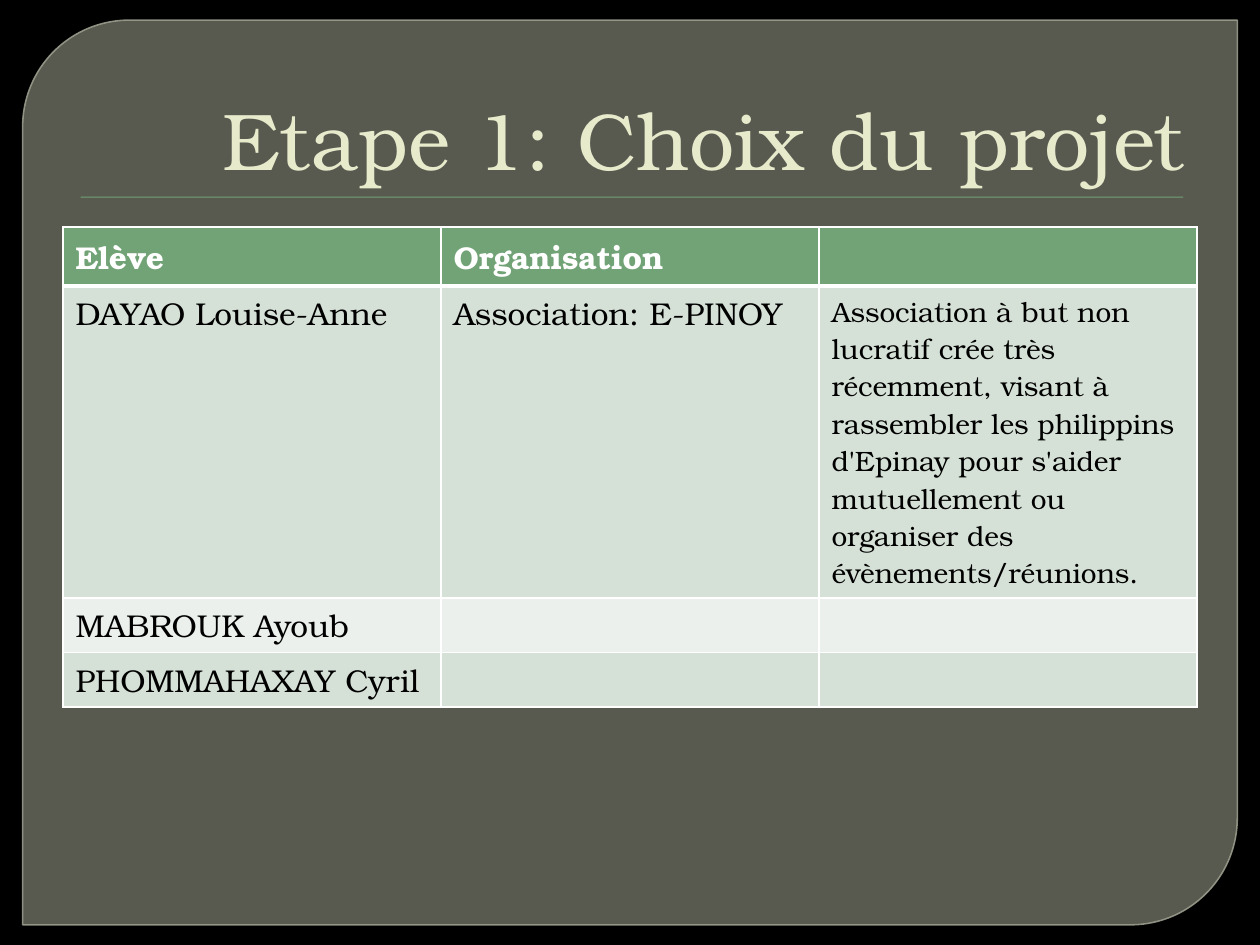
from dataclasses import dataclass

from lxml.etree import SubElement
from pptx import Presentation
from pptx.dml.color import RGBColor
from pptx.enum.shapes import MSO_SHAPE
from pptx.enum.text import MSO_ANCHOR, PP_ALIGN
from pptx.oxml.ns import qn
from pptx.util import Inches, Pt

FONT = "TeX Gyre Bonum"
COLORS = {
    "background": "000000",
    "panel": "888B7B",
    "panel_line": "9DA090",
    "green": "72A376",
    "title": "E7EACB",
    "band_dark": "D5E0D6",
    "band_light": "EBF0EC",
    "white": "FFFFFF",
    "black": "000000",
}


@dataclass
class Row:
    cells: tuple[str, str, str]
    height: float
    fill: str
    color: str = "black"
    bold: bool = False
    top: float = 1
    bottom: float = 1


ROWS = [
    Row(("Elève", "Organisation", ""), 0.47, "green", "white", True, bottom=3),
    Row(("DAYAO Louise-Anne", "Association: E-PINOY",
         "Association à but non lucratif crée très récemment, visant à "
         "rassembler les philippins d'Epinay pour s'aider mutuellement ou "
         "organiser des évènements/réunions."), 2.47, "band_dark", top=3),
    Row(("MABROUK Ayoub", "", ""), 0.43, "band_light"),
    Row(("PHOMMAHAXAY Cyril", "", ""), 0.43, "band_dark"),
]
SIZES = (18, 18, 16)


def rgb(name: str) -> RGBColor:
    return RGBColor.from_string(COLORS[name])


def write(tf, text: str, *, size: float, color: str, bold=False, align=None) -> None:
    p = tf.paragraphs[0]
    p.alignment = align
    if text:
        p.add_run().text = text
    for font in [p.font] + [r.font for r in p.runs]:
        font.name = FONT
        font.size = Pt(size)
        font.bold = bold
        font.color.rgb = rgb(color)


def set_alpha(fill, percent: int) -> None:
    color = fill._xPr.find(qn("a:solidFill"))[0]
    SubElement(color, qn("a:alpha"), val=str(percent * 1000))


def add_backdrop(s, kind, box: tuple, fill: str):
    """Add a shape behind the title."""
    sp = s.shapes.add_shape(kind, *map(Inches, box))
    sp.shadow.inherit = False
    sp.fill.solid()
    sp.fill.fore_color.rgb = rgb(fill)
    sp.line.fill.background()
    s.shapes.title._element.addprevious(sp._element)
    return sp


def set_borders(cell, **widths: float) -> None:
    tcPr = cell._tc.get_or_add_tcPr()
    for i, (side, width) in enumerate(widths.items()):
        ln = tcPr.makeelement(qn(f"a:ln{side}"), {"w": str(Pt(width))})
        SubElement(SubElement(ln, qn("a:solidFill")), qn("a:srgbClr"), val=COLORS["white"])
        tcPr.insert(i, ln)


def add_students(s, rows: list[Row]) -> None:
    height = sum(row.height for row in rows)
    table = s.shapes.add_table(len(rows), len(SIZES), Inches(0.5), Inches(1.8),
                               Inches(9), Inches(height)).table
    for i, row in enumerate(rows):
        table.rows[i].height = Inches(row.height)
        for j, (text, size) in enumerate(zip(row.cells, SIZES)):
            cell = table.cell(i, j)
            cell.fill.solid()
            cell.fill.fore_color.rgb = rgb(row.fill)
            set_borders(cell, L=1, R=1, T=row.top, B=row.bottom)
            write(cell.text_frame, text, size=size, color=row.color, bold=row.bold)


def main() -> None:
    prs = Presentation()
    prs.slide_width, prs.slide_height = Inches(10), Inches(7.5)
    s = prs.slides.add_slide(prs.slide_layouts[5])
    s.background.fill.solid()
    s.background.fill.fore_color.rgb = rgb("background")

    panel = add_backdrop(s, MSO_SHAPE.ROUND_2_DIAG_RECTANGLE,
                         (0.18, 0.16, 9.64, 7.18), "panel")
    panel.adjustments[0] = 0.118
    panel.adjustments[1] = 0
    set_alpha(panel.fill, 65)
    panel.line.color.rgb = rgb("panel_line")
    panel.line.width = Pt(0.87)
    set_alpha(panel.line.fill, 88)
    add_backdrop(s, MSO_SHAPE.RECTANGLE, (0.64, 1.56, 8.75, 0.01), "green")

    title = s.shapes.title
    title.left, title.top = Inches(0.5), Inches(0.28)
    title.width, title.height = Inches(9), Inches(1.25)
    title.text_frame.vertical_anchor = MSO_ANCHOR.BOTTOM
    write(title.text_frame, "Etape 1: Choix du projet", size=46, color="title",
          align=PP_ALIGN.RIGHT)

    add_students(s, ROWS)
    prs.save("out.pptx")


if __name__ == "__main__":
    main()
